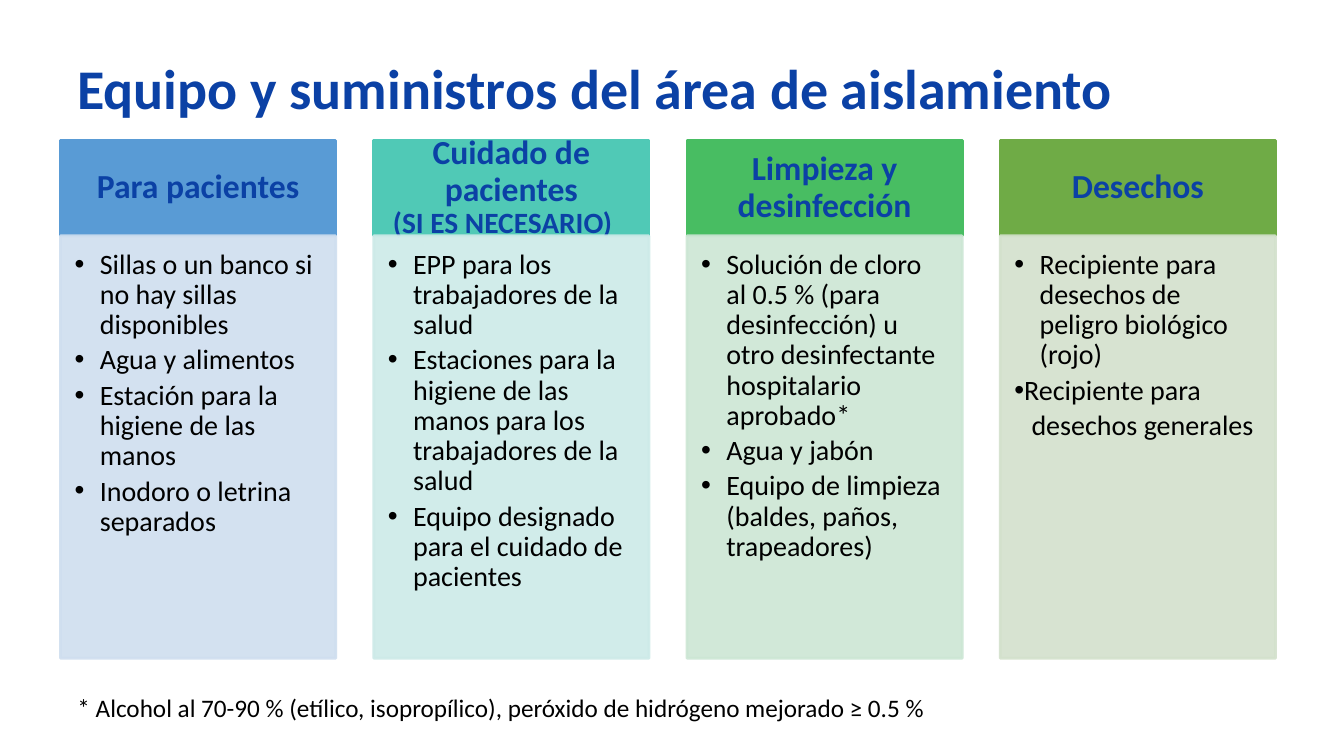
from pptx import Presentation
from pptx.dml.color import RGBColor
from pptx.enum.shapes import MSO_SHAPE
from pptx.enum.text import MSO_ANCHOR, PP_ALIGN
from pptx.oxml.ns import qn
from pptx.util import Inches, Pt
from lxml import etree

RECT = MSO_SHAPE.RECTANGLE
TOP, MIDDLE, BOTTOM = MSO_ANCHOR.TOP, MSO_ANCHOR.MIDDLE, MSO_ANCHOR.BOTTOM
LEFT, CENTER = PP_ALIGN.LEFT, PP_ALIGN.CENTER

NAVY = RGBColor(0x0B, 0x41, 0xA5)
BLACK = RGBColor(0x00, 0x00, 0x00)
BLUE = RGBColor(0x59, 0x9B, 0xD5)
PALE_BLUE = RGBColor(0xCF, 0xDE, 0xEF)
TEAL = RGBColor(0x50, 0xC9, 0xB6)
PALE_TEAL = RGBColor(0xCD, 0xEA, 0xE8)
GREEN = RGBColor(0x48, 0xBD, 0x62)
PALE_GREEN = RGBColor(0xCC, 0xE6, 0xD4)
OLIVE = RGBColor(0x6F, 0xAB, 0x46)
PALE_OLIVE = RGBColor(0xD3, 0xE1, 0xCC)

# Column grid, in inches
GRID_LEFT, GRID_TOP = 0.6, 1.39
COL_W, GAP = 2.73, 0.377
HEAD_H, BODY_H = 0.95, 4.19
MARGIN = 0.67

HEAD_INSETS = (0.19, 0.11, 0.19, 0.11)
BODY_INSETS = (0.14, 0.14, 0.19, 0.21)
TITLE_FONT = {"name": "Calibri", "size": Pt(40), "bold": True}
HEAD_FONT = {"name": "Calibri", "size": Pt(24), "bold": True}
NOTE_FONT = {"name": "Calibri", "size": Pt(21), "bold": True}
BODY_FONT = {"name": "Calibri", "size": Pt(20), "bold": False}
FOOT_FONT = {"name": "Calibri", "size": Pt(18), "bold": False}

# Paragraph layouts: left margin, first-line indent (inches), bullet
ITEM = (0.25, -0.25, True)
TIGHT_ITEM = (0.09, -0.09, True)
CONTINUED = (0.17, 0, False)

COLUMNS = [
    (BLUE, PALE_BLUE, [("Para pacientes", HEAD_FONT, CENTER)], [
        ("Sillas o un banco si no hay sillas disponibles", ITEM),
        ("Agua y alimentos", ITEM),
        ("Estación para la higiene de las manos", ITEM),
        ("Inodoro o letrina separados", ITEM)]),
    (TEAL, PALE_TEAL, [("Cuidado de pacientes", HEAD_FONT, CENTER),
                       ("(SI ES NECESARIO)", NOTE_FONT, LEFT)], [
        ("EPP para los trabajadores de la salud", ITEM),
        ("Estaciones para la higiene de las manos para los trabajadores de la salud", ITEM),
        ("Equipo designado para el cuidado de pacientes", ITEM)]),
    (GREEN, PALE_GREEN, [("Limpieza y desinfección", HEAD_FONT, CENTER)], [
        ("Solución de cloro al 0.5 % (para desinfección) u otro desinfectante "
         "hospitalario aprobado*", ITEM),
        ("Agua y jabón", ITEM),
        ("Equipo de limpieza (baldes, paños, trapeadores)", ITEM)]),
    (OLIVE, PALE_OLIVE, [("Desechos", HEAD_FONT, CENTER)], [
        ("Recipiente para desechos de peligro biológico (rojo)", ITEM),
        ("Recipiente para", TIGHT_ITEM),
        ("desechos generales", CONTINUED)]),
]


def add_text(tf, i, text, font, color, align=LEFT, spacing=0.9, layout=None):
    """Write paragraph i of a text frame; layout gives its indents and bullet."""
    p = tf.paragraphs[0] if i == 0 else tf.add_paragraph()
    p.alignment, p.line_spacing = align, spacing
    if layout:
        margin, indent, bullet = layout
        pPr = p._p.get_or_add_pPr()
        pPr.set("marL", str(Inches(margin)))
        pPr.set("indent", str(Inches(indent)))
        if i:
            p.space_before = Pt(3.6)
        if bullet:
            etree.SubElement(pPr, qn("a:buFont")).set("typeface", "Arial")
            etree.SubElement(pPr, qn("a:buChar")).set("char", "•")
    r = p.add_run()
    r.text = text
    for key, value in font.items():
        setattr(r.font, key, value)
    r.font.color.rgb = color


def add_panel(x, y, h, color, insets, anchor, alpha=None):
    """Add a column rectangle and return its text frame."""
    sp = s.shapes.add_shape(RECT, Inches(x), Inches(y), Inches(COL_W), Inches(h))
    sp.shadow.inherit = False
    sp.fill.solid()
    sp.fill.fore_color.rgb = color
    sp.line.color.rgb = color
    sp.line.width = Pt(2)
    if alpha:
        for clr in sp._element.spPr.iter(qn("a:srgbClr")):
            etree.SubElement(clr, qn("a:alpha")).set("val", str(alpha * 1000))
    tf = sp.text_frame
    tf.word_wrap, tf.vertical_anchor = True, anchor
    for side, inset in zip(("left", "top", "right", "bottom"), insets):
        setattr(tf, "margin_" + side, Inches(inset))
    return tf


prs = Presentation()
prs.slide_width, prs.slide_height = Inches(13.33), Inches(7.5)
s = prs.slides.add_slide(prs.slide_layouts[6])

title = s.shapes.add_textbox(Inches(MARGIN), Inches(0.3), Inches(12), Inches(0.95))
tf = title.text_frame
tf.word_wrap, tf.vertical_anchor = True, BOTTOM
add_text(tf, 0, "Equipo y suministros del área de aislamiento", TITLE_FONT, NAVY,
         spacing=Pt(40))

for col, (head_color, body_color, heading, items) in enumerate(COLUMNS):
    x = GRID_LEFT + col * (COL_W + GAP)
    tf = add_panel(x, GRID_TOP, HEAD_H, head_color, HEAD_INSETS, MIDDLE)
    for i, (text, font, align) in enumerate(heading):
        add_text(tf, i, text, font, NAVY, align)
    tf = add_panel(x, GRID_TOP + HEAD_H, BODY_H, body_color, BODY_INSETS, TOP, alpha=90)
    for i, (text, layout) in enumerate(items):
        add_text(tf, i, text, BODY_FONT, BLACK, layout=layout)

footnote = s.shapes.add_textbox(Inches(MARGIN), Inches(6.82), Inches(8.87), Inches(0.4))
tf = footnote.text_frame
tf.word_wrap = True
add_text(tf, 0, "* Alcohol al 70-90 % (etílico, isopropílico), "
         "peróxido de hidrógeno mejorado ≥ 0.5 %", FOOT_FONT, BLACK, spacing=1.0)

prs.save("out.pptx")
